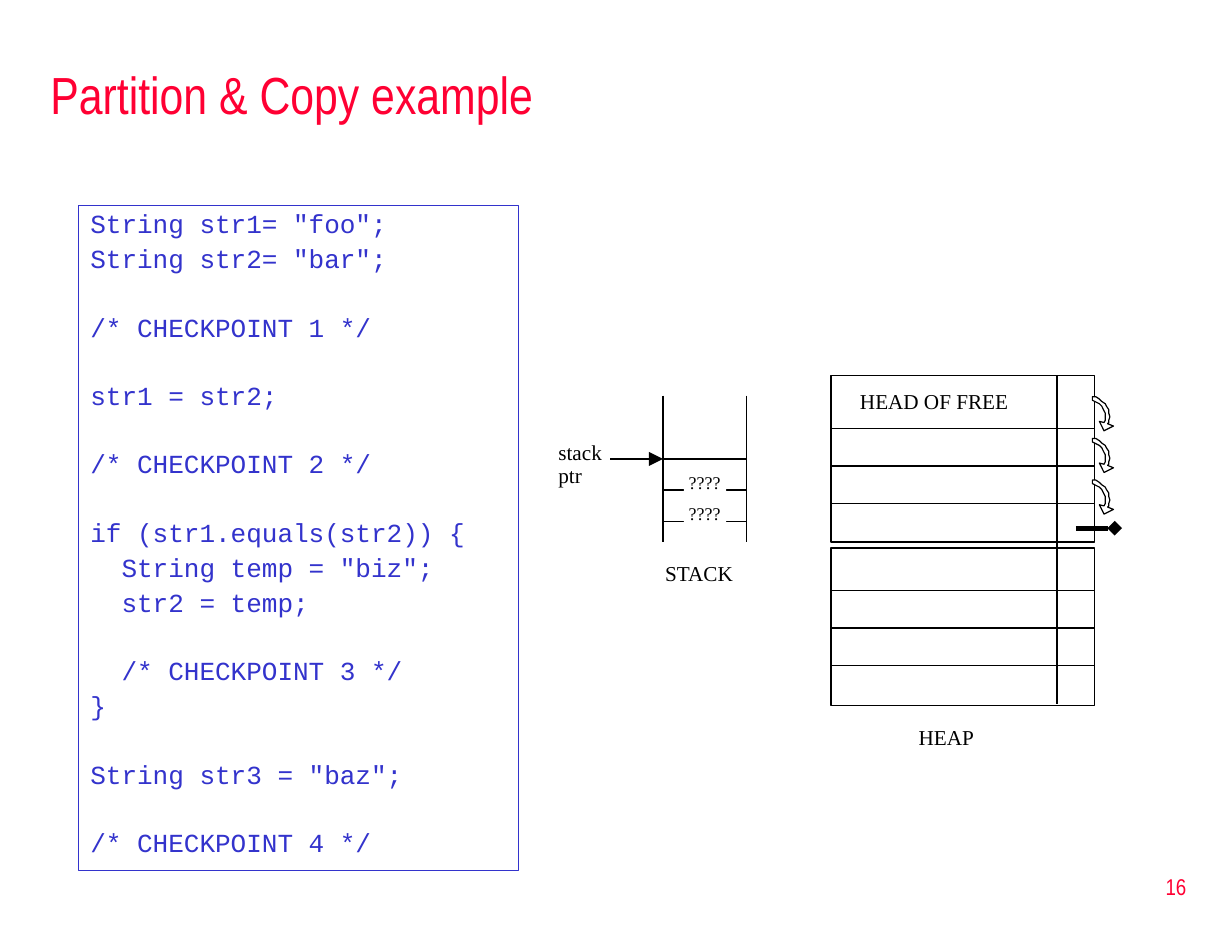
from dataclasses import dataclass

from pptx import Presentation
from pptx.dml.color import RGBColor
from pptx.enum.shapes import MSO_CONNECTOR, MSO_SHAPE
from pptx.enum.text import MSO_ANCHOR, MSO_AUTO_SIZE, PP_ALIGN
from pptx.oxml.ns import qn
from pptx.util import Inches, Pt

STRAIGHT = MSO_CONNECTOR.STRAIGHT
RECTANGLE = MSO_SHAPE.RECTANGLE
TOP, MIDDLE = MSO_ANCHOR.TOP, MSO_ANCHOR.MIDDLE
LEFT, RIGHT = PP_ALIGN.LEFT, PP_ALIGN.RIGHT
NO_AUTOFIT = MSO_AUTO_SIZE.NONE


@dataclass(frozen=True)
class Theme:
    red: RGBColor = RGBColor(0xFF, 0x00, 0x33)
    blue: RGBColor = RGBColor(0x33, 0x33, 0xCC)
    black: RGBColor = RGBColor(0, 0, 0)
    white: RGBColor = RGBColor(0xFF, 0xFF, 0xFF)
    heading_font: str = "Arial Narrow"
    code_font: str = "Courier New"
    label_font: str = "Times New Roman"
    title_size: float = 32
    code_size: float = 16
    number_size: float = 14
    label_size: float = 13
    cell_size: float = 11
    thin: float = 0.75
    medium: float = 1
    thick: float = 3


THEME = Theme()


@dataclass(frozen=True)
class HeapHalf:
    top: float
    height: float
    first_divider: float
    pointer_column_top: float


@dataclass(frozen=True)
class Label:
    text: str
    left: float
    top: float
    width: float


HEAP_LEFT, HEAP_WIDTH, HEAP_ROW, POINTER_COLUMN = 7.08, 2.25, 0.32, 9.01
HEAP_HALVES = [HeapHalf(3.2, 1.42, 3.65, 3.2), HeapHalf(4.67, 1.34, 5.03, 4.58)]
STACK_LEFT, STACK_RIGHT, STACK_TOP, STACK_BOTTOM = 5.65, 6.36, 3.37, 4.62
STACK_POINTER, STACK_ROW = 3.91, 0.265
LABELS = [
    Label("HEAD OF FREE", 7.33, 3.31, 1.4),
    Label("HEAP", 7.83, 6.17, 0.6),
    Label("STACK", 5.67, 4.77, 0.7),
    Label("stack", 4.76, 3.74, 0.44),
    Label("ptr", 4.76, 3.94, 0.44),
]

# Each block of code is set apart by a one-line gap
CODE_BLOCKS = [
    ['String str1= "foo";', 'String str2= "bar";'],
    ["/* CHECKPOINT 1 */"],
    ["str1 = str2;"],
    ["/* CHECKPOINT 2 */"],
    ["if (str1.equals(str2)) {", '  String temp = "biz";', "  str2 = temp;"],
    ["  /* CHECKPOINT 3 */", "}"],
    ['String str3 = "baz";'],
    ["/* CHECKPOINT 4 */"],
]
CODE_SPACE, CODE_PITCH = 4.2, 20.5

# Outline of a curved link arrow, from its top left corner
LINK_OUTLINE = [
    (0.10, 0.22), (0.11, 0.20), (0.11, 0.14), (0.10, 0.12), (0.09, 0.10),
    (0.08, 0.08), (0.06, 0.06), (0.04, 0.05), (0.02, 0.04), (0, 0.03),
    (0, 0), (0.03, 0), (0.06, 0.02), (0.08, 0.04), (0.11, 0.06),
    (0.12, 0.08), (0.14, 0.11), (0.14, 0.14), (0.15, 0.17), (0.14, 0.20),
    (0.14, 0.22), (0.13, 0.23), (0.18, 0.25), (0.10, 0.29), (0.06, 0.21),
]
LINK_LEFT, LINK_TOP, LINK_PITCH = 9.31, 3.38, 0.355
ARROWHEAD = [(0, 0.12), (0.12, 0.06), (0, 0)]


def place(shape, left: float, top: float, width: float, height: float) -> None:
    shape.left, shape.top = Inches(left), Inches(top)
    shape.width, shape.height = Inches(width), Inches(height)


def write(paragraph, text: str, *, font: str, size: float, color: RGBColor,
          align=LEFT) -> None:
    paragraph.alignment = align
    run = paragraph.add_run()
    run.text = text
    run.font.name, run.font.size = font, Pt(size)
    run.font.color.rgb = color


def set_frame(frame, anchor=TOP, insets=(0, 0, 0, 0)) -> None:
    frame.word_wrap, frame.auto_size = True, NO_AUTOFIT
    frame.vertical_anchor = anchor
    (frame.margin_left, frame.margin_top,
     frame.margin_right, frame.margin_bottom) = map(Inches, insets)


def add_text(slide, text: str, left: float, top: float, width: float,
             height: float, *, anchor=TOP, insets=(0, 0, 0, 0), fill=None,
             **text_format) -> None:
    box = slide.shapes.add_textbox(0, 0, 0, 0)
    place(box, left, top, width, height)
    if fill is not None:
        box.fill.solid()
        box.fill.fore_color.rgb = fill
    set_frame(box.text_frame, anchor, insets)
    write(box.text_frame.paragraphs[0], text, **text_format)


def add_line(slide, start: tuple[float, float], end: tuple[float, float],
             width: float, tail: str = "") -> None:
    line = slide.shapes.add_connector(STRAIGHT, *map(Inches, start + end))
    line.line.color.rgb, line.line.width = THEME.black, Pt(width)
    properties = line._element.spPr
    if tail:
        outline = properties.find(qn("a:ln"))
        outline.append(outline.makeelement(qn("a:tailEnd"), {"type": tail}))
    properties.append(properties.makeelement(qn("a:effectLst"), {}))


def style_shape(shape, fill: RGBColor, width: float = 0) -> None:
    shape.shadow.inherit = False
    shape.fill.solid()
    shape.fill.fore_color.rgb = fill
    if width:
        shape.line.color.rgb, shape.line.width = THEME.black, Pt(width)
    else:
        shape.line.fill.background()


def add_outline(slide, points: list[tuple[float, float]], left: float,
                top: float, fill: RGBColor, width: float = 0) -> None:
    corners = [(Inches(left + x), Inches(top + y)) for x, y in points]
    builder = slide.shapes.build_freeform(*corners[0])
    builder.add_line_segments(corners[1:], close=True)
    style_shape(builder.convert_to_shape(), fill, width)


def add_code(body) -> None:
    place(body, 0.67, 1.75, 3.75, 5.67)
    body.line.color.rgb, body.line.width = THEME.blue, Pt(THEME.thin)
    frame = body.text_frame
    set_frame(frame, insets=(0.1, 0.05, 0.1, 0.05))
    for block_index, block in enumerate(CODE_BLOCKS):
        for line_index, text in enumerate(block):
            first = block_index == line_index == 0
            paragraph = frame.paragraphs[0] if first else frame.add_paragraph()
            gap = CODE_PITCH if block_index and line_index == 0 else 0
            paragraph.line_spacing = 0.9
            paragraph.space_before = Pt(CODE_SPACE + gap)
            write(paragraph, text, font=THEME.code_font, size=THEME.code_size,
                  color=THEME.blue)
            properties = paragraph._p.get_or_add_pPr()
            properties.set("marL", "0")
            properties.set("indent", "0")
            properties.append(properties.makeelement(qn("a:buNone"), {}))


def add_heap_half(slide, half: HeapHalf) -> None:
    frame = slide.shapes.add_shape(RECTANGLE, 0, 0, 0, 0)
    place(frame, HEAP_LEFT, half.top, HEAP_WIDTH, half.height)
    style_shape(frame, THEME.white, THEME.medium)
    for row in range(3):
        y = half.first_divider + row * HEAP_ROW
        add_line(slide, (HEAP_LEFT, y), (HEAP_LEFT + HEAP_WIDTH, y), THEME.medium)
    add_line(slide, (POINTER_COLUMN, half.pointer_column_top),
             (POINTER_COLUMN, half.pointer_column_top + 1.42), THEME.medium)


def add_stack(slide) -> None:
    for x in (STACK_LEFT, STACK_RIGHT):
        add_line(slide, (x, STACK_TOP), (x, STACK_BOTTOM), THEME.thin)
    for row in range(3):
        y = STACK_POINTER + row * STACK_ROW
        add_line(slide, (STACK_LEFT, y), (STACK_RIGHT, y), THEME.thin)
        if row:
            add_text(slide, "????", 5.83, y - 0.18, 0.36, 0.19,
                     insets=(0.04, 0.02, 0, 0), fill=THEME.white,
                     font=THEME.label_font, size=THEME.cell_size, color=THEME.black)
    add_line(slide, (5.2, STACK_POINTER), (5.53, STACK_POINTER), THEME.thin)
    add_outline(slide, ARROWHEAD, 5.53, STACK_POINTER - 0.06, THEME.black)


def main() -> None:
    presentation = Presentation()
    presentation.slide_width, presentation.slide_height = Inches(10.5), Inches(8)
    slide = presentation.slides.add_slide(presentation.slide_layouts[1])

    # Title, code and slide number
    title = slide.shapes.title
    place(title, 0.33, 0.42, 9.92, 0.75)
    set_frame(title.text_frame, MIDDLE, (0.1, 0.05, 0.1, 0.05))
    heading = {"font": THEME.heading_font, "color": THEME.red}
    write(title.text_frame.paragraphs[0], "Partition & Copy example",
          size=THEME.title_size, **heading)
    add_code(slide.placeholders[1])
    add_text(slide, "16", 8.02, 7.29, 2.19, 0.53, anchor=MIDDLE, align=RIGHT,
             insets=(0.1, 0.05, 0.1, 0.05), size=THEME.number_size, **heading)

    # Heap, stack and their labels
    for half in HEAP_HALVES:
        add_heap_half(slide, half)
    add_stack(slide)
    for label in LABELS:
        add_text(slide, label.text, label.left, label.top, label.width, 0.22,
                 font=THEME.label_font, size=THEME.label_size, color=THEME.black)

    # Links of the free list and its end mark
    for link in range(3):
        add_outline(slide, LINK_OUTLINE, LINK_LEFT, LINK_TOP + link * LINK_PITCH,
                    THEME.white, THEME.thin)
    add_line(slide, (9.17, 4.5), (9.5, 4.5), THEME.thick, "diamond")

    presentation.save("out.pptx")


if __name__ == "__main__":
    main()
